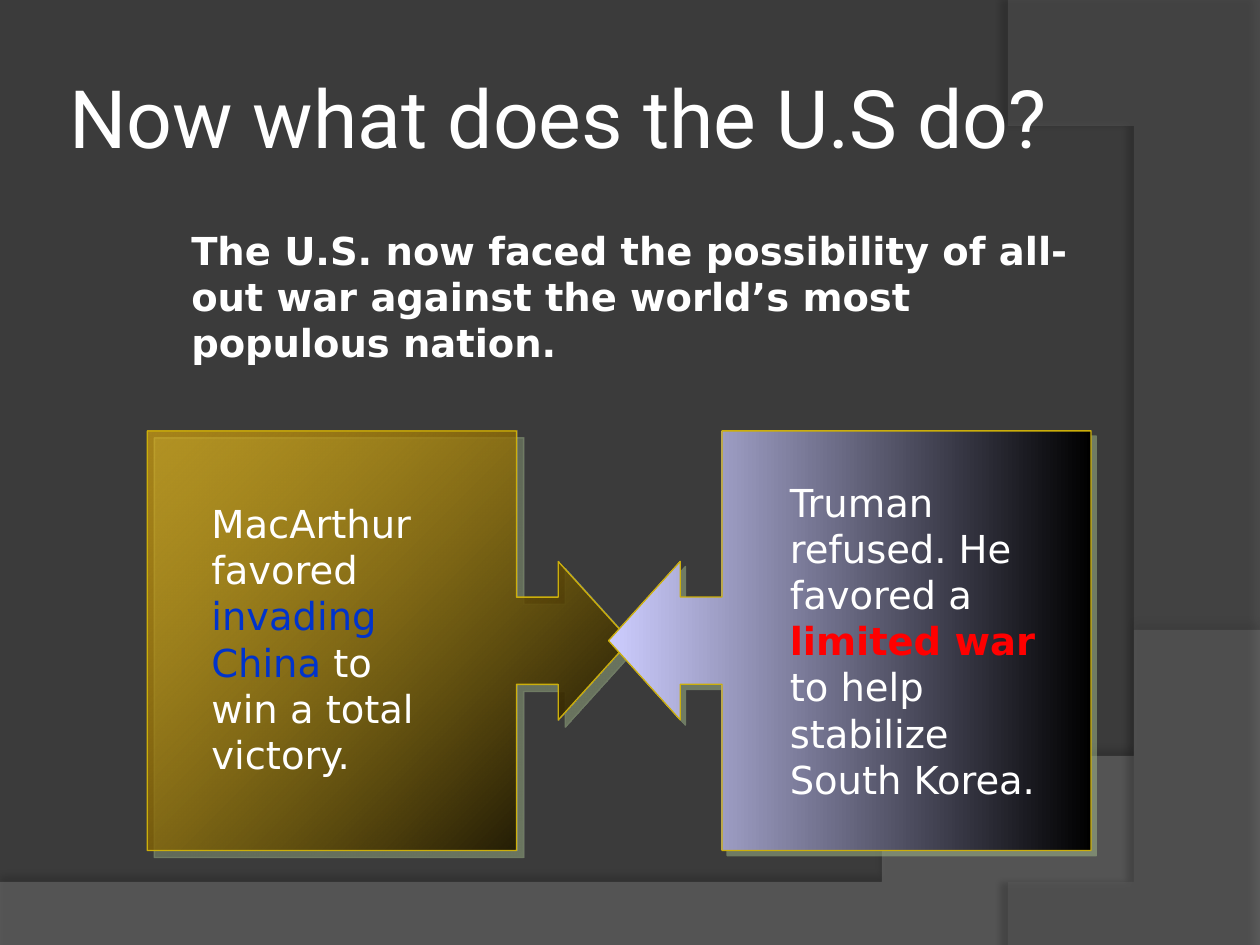
from lxml import etree
from pptx import Presentation
from pptx import util as u
from pptx.dml.color import RGBColor
from pptx.enum import shapes, text
from pptx.oxml import ns

THEME = {
    "back": "3B3B3B", "text": "FFFFFF", "blue": "0033CC", "red": "FF0000",
    "line": "CCAF0A", "line_width": 0.75, "glow": "ADC793", "dark": "000000",
    "title_font": "Roboto", "body_font": "DejaVu Sans",
    "title_size": 46, "body_size": 22,
}

TITLE = ("Now what does the U.S do?", (0.5, 0.3, 8.17, 1.25))

NOTES = [
    ((1.42, 1.75, 7.17, 1.21), [
        ("The U.S. now faced the possibility of all-out war against "
         "the world’s most populous nation.", "text", True)]),
    ((1.58, 3.92, 1.93, 2.3), [
        ("MacArthur favored ", "text", False),
        ("invading China ", "blue", False),
        ("to win a total victory.", "text", False)]),
    ((6.17, 3.75, 2.42, 2.66), [
        ("Truman refused. He favored a ", "text", False),
        ("limited war", "red", True),
        (" to help stabilize South Korea.", "text", False)]),
]

CALLOUT_SIZE = (3.33, 3.83)
CALLOUT_TOP = 3.17
CALLOUT_ADJUST = (0.208, 0.189, 0.171, 0.765)
CALLOUTS = [
    {"left": 1.42, "turn": 90, "start": ("FFC000", 55), "angle": 225, "distance": 5.7},
    {"left": 5.08, "turn": 270, "start": ("CDCDFF", 100), "angle": 90, "distance": 4.2},
]

BANDS = [
    {"outline": [(0, 7.05), (0, 7.51), (10, 7.51), (10, 5.2),
                 ((5.59, 7.29), (3.91, 7.19), (0, 7.05))],
     "fill": ("7F7F7F", 45), "shadow": ("000000", 35, 4, 3.5, 270)},
    {"outline": [(10, 0.02), (10, 7.5), (8.21, 7.5),
                 ((9.35, 6.19), (10.18, 3), (8, 0)), (10, 0.02)],
     "fill": ("5E5E5E", 40), "shadow": ("000000", 45, 4, 4, 180)},
]
CURVE_STEPS = 40


def rgb(value):
    return RGBColor.from_string(value)


def assign(target, values):
    for name, value in values.items():
        setattr(target, name, value)


def add_node(parent, tag, **values):
    return etree.SubElement(parent, ns.qn(tag), {k: str(v) for k, v in values.items()})


def add_color(parent, color, opacity):
    node = add_node(parent, "a:srgbClr", val=color)
    add_node(node, "a:alpha", val=opacity * 1000)


def add_shadow(shape, color, opacity, blur, distance, direction):
    shape.shadow.inherit = False
    effects = shape.element.spPr.find(ns.qn("a:effectLst"))
    shadow = add_node(effects, "a:outerShdw", blurRad=u.Pt(blur), dist=u.Pt(distance),
                      dir=direction * 60000, algn="ctr", rotWithShape=0)
    add_color(shadow, color, opacity)


def curve(start, first, second, end):
    for step in range(1, CURVE_STEPS + 1):
        t = step / CURVE_STEPS
        weights = ((1 - t) ** 3, 3 * t * (1 - t) ** 2, 3 * t * t * (1 - t), t ** 3)
        points = (start, first, second, end)
        yield tuple(sum(w * p[axis] for w, p in zip(weights, points)) for axis in (0, 1))


def add_band(page, band):
    points = []
    for item in band["outline"]:
        if isinstance(item[0], tuple):
            points.extend(curve(points[-1], *item))
        else:
            points.append(item)
    builder = page.shapes.build_freeform(*points[0], scale=u.Inches(1))
    builder.add_line_segments(points[1:], close=True)
    shape = builder.convert_to_shape()
    color, opacity = band["fill"]
    shape.fill.solid()
    shape.fill.fore_color.rgb = rgb(color)
    node = shape.element.spPr.find(ns.qn("a:solidFill"))[0]
    add_node(node, "a:alpha", val=opacity * 1000)
    shape.line.fill.background()
    add_shadow(shape, *band["shadow"])


def add_callout(page, item):
    place = (item["left"], CALLOUT_TOP, *CALLOUT_SIZE)
    shape = page.shapes.add_shape(shapes.MSO_SHAPE.UP_ARROW_CALLOUT, *map(u.Inches, place))
    for index, value in enumerate(CALLOUT_ADJUST):
        shape.adjustments[index] = value
    shape.rotation = item["turn"]
    shape.element.spPr.xfrm.set("flipH", "1")
    shape.fill.gradient()
    gradient = shape.element.spPr.find(ns.qn("a:gradFill"))
    for child in list(gradient):
        gradient.remove(child)
    gradient.set("rotWithShape", "1")
    stops = add_node(gradient, "a:gsLst")
    for position, stop in ((0, item["start"]), (100, (THEME["dark"], 100))):
        add_color(add_node(stops, "a:gs", pos=position * 1000), *stop)
    add_node(gradient, "a:lin", ang=item["angle"] * 60000, scaled=0)
    shape.line.color.rgb = rgb(THEME["line"])
    shape.line.width = u.Pt(THEME["line_width"])
    add_shadow(shape, THEME["glow"], 46, 0, item["distance"], 45)


def write(frame, spans, font, size):
    para = frame.paragraphs[0]
    para.alignment = text.PP_ALIGN.LEFT
    for words, color, bold in spans:
        span = para.add_run()
        span.text = words
        assign(span.font, {"name": font, "size": u.Pt(size), "bold": bold})
        span.font.color.rgb = rgb(THEME[color])


def add_title(page):
    words, place = TITLE
    title = page.shapes.title
    assign(title, dict(zip(("left", "top", "width", "height"), map(u.Inches, place))))
    margins = ("margin_left", "margin_top", "margin_right", "margin_bottom")
    assign(title.text_frame, dict.fromkeys(margins, u.Inches(0.05)))
    assign(title.text_frame, {"vertical_anchor": text.MSO_ANCHOR.MIDDLE, "word_wrap": True})
    write(title.text_frame, [(words, "text", False)], THEME["title_font"], THEME["title_size"])
    page.shapes.element.append(title.element)


def add_note(page, place, spans):
    box = page.shapes.add_textbox(*map(u.Inches, place))
    assign(box.text_frame, {"word_wrap": True,
                            "auto_size": text.MSO_AUTO_SIZE.SHAPE_TO_FIT_TEXT})
    write(box.text_frame, spans, THEME["body_font"], THEME["body_size"])


def main():
    deck = Presentation()
    assign(deck, {"slide_width": u.Inches(10), "slide_height": u.Inches(7.5)})
    page = deck.slides.add_slide(deck.slide_layouts[5])
    page.background.fill.solid()
    page.background.fill.fore_color.rgb = rgb(THEME["back"])
    for band in BANDS:
        add_band(page, band)
    add_title(page)
    intro, *views = NOTES
    add_note(page, *intro)
    for item in CALLOUTS:
        add_callout(page, item)
    for view in views:
        add_note(page, *view)
    deck.save("out.pptx")


if __name__ == "__main__":
    main()
